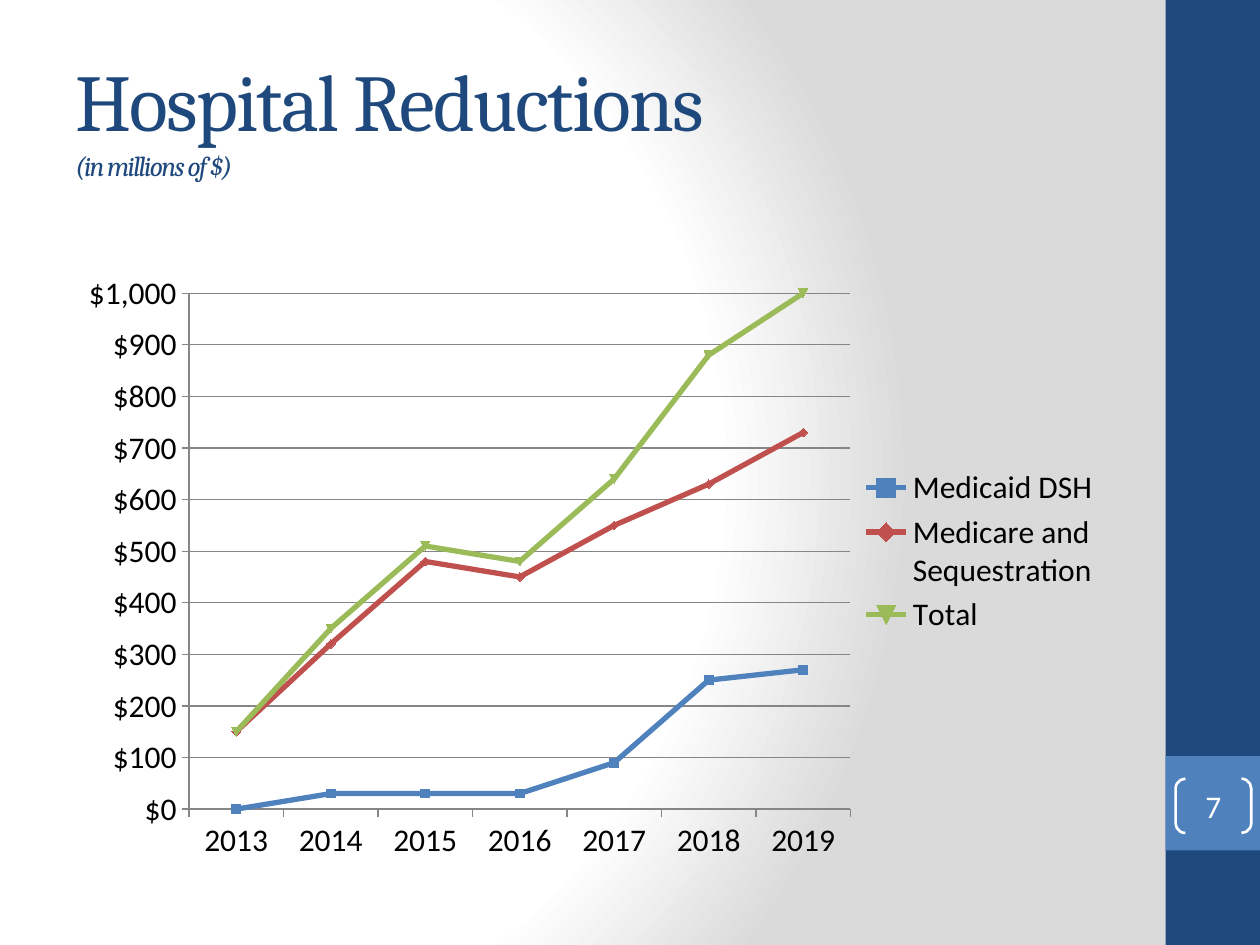
from lxml.etree import SubElement
from pptx import Presentation
from pptx.chart.data import CategoryChartData
from pptx.dml.color import RGBColor
from pptx.enum.chart import XL_CHART_TYPE, XL_LEGEND_POSITION, XL_TICK_MARK
from pptx.enum.shapes import MSO_SHAPE
from pptx.enum.text import MSO_ANCHOR, PP_ALIGN
from pptx.oxml import parse_xml
from pptx.oxml.ns import nsdecls, qn
from pptx.util import Pt

COLORS = {
    "navy": "1F497D",
    "blue": "4F81BD",
    "red": "C0504D",
    "green": "9BBB59",
    "white": "FFFFFF",
    "gray": "DADADA",
    "grid": "868686",
    "black": "000000",
}
YEARS = [str(year) for year in range(2013, 2020)]
REDUCTIONS = [
    ("Medicaid DSH", "blue", (0, 30, 30, 30, 90, 250, 270)),
    ("Medicare and Sequestration", "red", (150, 320, 480, 450, 550, 630, 730)),
    ("Total", "green", (150, 350, 510, 480, 640, 880, 1000)),
]
PLOT_LAYOUT = {"x": 0.12, "y": 0.11, "w": 0.63, "h": 0.78}


def color(name):
    return RGBColor.from_string(COLORS[name])


def set_attributes(target, values):
    for name, value in values.items():
        setattr(target, name, value)


def set_font(font, color_name, **values):
    set_attributes(font, values)
    font.color.rgb = color(color_name)


def set_background(slide):
    """Fill the background with a circular gradient from white to gray."""
    slide.background.fill.solid()
    properties = slide.element.find(".//" + qn("p:bgPr"))
    properties.remove(properties[0])
    stops = "".join(
        f'<a:gs pos="{position * 1000}"><a:srgbClr val="{COLORS[name]}"/></a:gs>'
        for position, name in ((0, "white"), (75, "white"), (100, "gray"))
    )
    properties.insert(0, parse_xml(
        f'<a:gradFill {nsdecls("a")} rotWithShape="1"><a:gsLst>{stops}</a:gsLst>'
        '<a:path path="circle">'
        '<a:fillToRect l="20000" t="50000" r="100000" b="50000"/>'
        "</a:path></a:gradFill>"
    ))


def add_block(slide, top, height, fill):
    """Add a rectangle to the band on the right edge."""
    block = slide.shapes.add_shape(
        MSO_SHAPE.RECTANGLE, Pt(666), Pt(top), Pt(54), Pt(height))
    block.shadow.inherit = False
    block.fill.solid()
    block.fill.fore_color.rgb = color(fill)
    block.line.fill.background()


def add_title(slide, title, subtitle):
    box = slide.shapes.add_textbox(Pt(36), Pt(21.6), Pt(600), Pt(90))
    set_attributes(box.text_frame, {
        "word_wrap": True, "vertical_anchor": MSO_ANCHOR.MIDDLE})
    paragraph = box.text_frame.paragraphs[0]
    for text, size, italic in ((title, 46, False), (subtitle, 16, True)):
        if paragraph.runs:
            paragraph.add_line_break()
        run = paragraph.add_run()
        run.text = text
        set_font(run.font, "navy", name="Cambria", size=Pt(size), italic=italic)
        run.font._element.set("spc", "-100")


def add_page_number(slide, number):
    bracket = slide.shapes.add_shape(
        MSO_SHAPE.DOUBLE_BRACKET, Pt(671.8), Pt(445), Pt(43.2), Pt(31))
    bracket.adjustments[0] = 0.18
    bracket.shadow.inherit = False
    bracket.fill.background()
    bracket.line.color.rgb = color("white")
    bracket.line.width = Pt(1.5)
    frame = bracket.text_frame
    set_attributes(frame, {
        "margin_left": 0, "margin_right": 0, "margin_top": 0,
        "margin_bottom": 0, "vertical_anchor": MSO_ANCHOR.MIDDLE})
    frame.text = number
    paragraph = frame.paragraphs[0]
    paragraph.alignment = PP_ALIGN.CENTER
    set_font(paragraph.runs[0].font, "white", name="Calibri", size=Pt(18))


def set_plot_layout(chart):
    """Fix the inner plot area as fractions of the chart."""
    plot_area = chart.element.find(".//" + qn("c:plotArea"))
    for layout in plot_area.findall(qn("c:layout")):
        plot_area.remove(layout)
    layout = parse_xml(f'<c:layout {nsdecls("c")}/>')
    plot_area.insert(0, layout)
    manual = SubElement(layout, qn("c:manualLayout"))
    settings = {"layoutTarget": "inner", "xMode": "edge", "yMode": "edge"}
    for name, value in {**settings, **PLOT_LAYOUT}.items():
        SubElement(manual, qn(f"c:{name}")).set("val", str(value))


def format_axes(chart):
    for axis in (chart.category_axis, chart.value_axis):
        set_attributes(axis, {
            "major_tick_mark": XL_TICK_MARK.OUTSIDE,
            "minor_tick_mark": XL_TICK_MARK.NONE})
        axis.format.line.color.rgb = color("grid")
    set_attributes(chart.value_axis, {
        "minimum_scale": 0, "maximum_scale": 1000, "major_unit": 100,
        "has_major_gridlines": True})
    chart.value_axis.major_gridlines.format.line.color.rgb = color("grid")
    set_attributes(chart.value_axis.tick_labels, {
        "number_format": '"$"#,##0', "number_format_is_linked": False})


def add_line_chart(slide):
    data = CategoryChartData()
    data.categories = YEARS
    for name, _, values in REDUCTIONS:
        data.add_series(name, values)
    chart = slide.shapes.add_chart(
        XL_CHART_TYPE.LINE_MARKERS, Pt(36), Pt(126), Pt(600), Pt(378), data).chart
    set_attributes(chart, {"has_title": False, "has_legend": True})
    set_font(chart.font, "black", name="Calibri", size=Pt(18))
    set_attributes(chart.legend, {
        "position": XL_LEGEND_POSITION.RIGHT, "include_in_layout": False})
    chart.plots[0].vary_by_categories = False
    for series, (_, color_name, _) in zip(chart.plots[0].series, REDUCTIONS):
        series.smooth = False
        series.format.line.width = Pt(3)
        series.format.line.color.rgb = color(color_name)
        marker = series.marker.format
        marker.fill.solid()
        marker.fill.fore_color.rgb = color(color_name)
        marker.line.color.rgb = color(color_name)
    format_axes(chart)
    set_plot_layout(chart)


def main():
    presentation = Presentation()
    set_attributes(presentation, {"slide_width": Pt(720), "slide_height": Pt(540)})
    slide = presentation.slides.add_slide(presentation.slide_layouts[6])
    set_background(slide)
    add_block(slide, 0, 540, "navy")
    add_block(slide, 432, 54, "blue")
    add_title(slide, "Hospital Reductions", "(in millions of $)")
    add_line_chart(slide)
    add_page_number(slide, "7")
    presentation.save("out.pptx")


if __name__ == "__main__":
    main()
